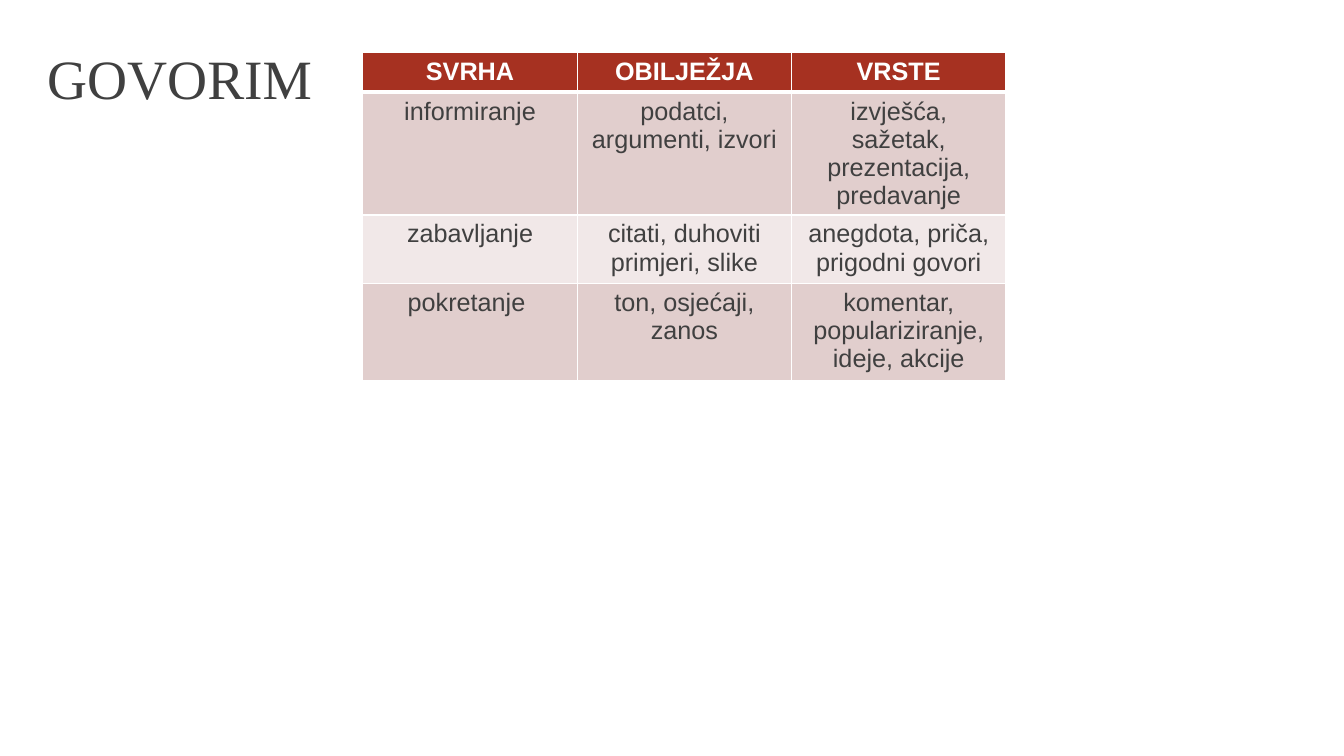
"""Build the GOVORIM slide with its table of speech purposes."""
from dataclasses import dataclass

from lxml import etree
from pptx import Presentation
from pptx.dml.color import RGBColor
from pptx.enum.text import MSO_ANCHOR, PP_ALIGN
from pptx.oxml.ns import qn
from pptx.util import Pt

BOTTOM = MSO_ANCHOR.BOTTOM
LEFT, CENTER = PP_ALIGN.LEFT, PP_ALIGN.CENTER
WHITE = RGBColor(0xFF, 0xFF, 0xFF)
DARK_GRAY = RGBColor(0x40, 0x40, 0x40)
BRICK = RGBColor(0xA6, 0x31, 0x21)
ROSE = RGBColor(0xE1, 0xCE, 0xCD)
PALE_ROSE = RGBColor(0xF1, 0xE8, 0xE8)
COLUMN_WIDTH = 153.1
THIN, THICK = 1, 3


@dataclass(frozen=True)
class TableRow:
    texts: tuple[str, str, str]
    height: float
    fill: RGBColor
    color: RGBColor = DARK_GRAY
    bold: bool = False
    top_line: float = THIN
    bottom_line: float = THIN


ROWS = (
    TableRow(("SVRHA", "OBILJEŽJA", "VRSTE"), 28.1, BRICK, WHITE, True, bottom_line=THICK),
    TableRow(("informiranje", "podatci, argumenti, izvori",
              "izvješća, sažetak, prezentacija, predavanje"), 87.6, ROSE, top_line=THICK),
    TableRow(("zabavljanje", "citati, duhoviti primjeri, slike",
              "anegdota, priča, prigodni govori"), 48.6, PALE_ROSE),
    TableRow(("pokretanje ", "ton, osjećaji, zanos",
              "komentar, populariziranje, ideje, akcije"), 69.6, ROSE),
)


def write_text(frame, text: str, *, font: str, size: float, color: RGBColor,
               bold: bool = False, align=LEFT, line_spacing: float = 1.0) -> None:
    frame.word_wrap = True
    para = frame.paragraphs[0]
    para.alignment = align
    para.line_spacing = line_spacing
    span = para.add_run()
    span.text = text
    span.font.name = font
    span.font.size = Pt(size)
    span.font.bold = bold
    span.font.color.rgb = color


def set_borders(cell, top: float, bottom: float) -> None:
    properties = cell._tc.get_or_add_tcPr()
    widths = {"a:lnL": THIN, "a:lnR": THIN, "a:lnT": top, "a:lnB": bottom}
    for position, (tag, width) in enumerate(widths.items()):
        line = etree.Element(qn(tag), w=str(Pt(width)))
        fill = etree.SubElement(line, qn("a:solidFill"))
        etree.SubElement(fill, qn("a:srgbClr"), val=str(WHITE))
        properties.insert(position, line)


def add_title(page) -> None:
    box = page.shapes.add_textbox(Pt(26.6), Pt(25.9), Pt(215.3), Pt(57.6))
    box.text_frame.vertical_anchor = BOTTOM
    write_text(box.text_frame, "GOVORIM", font="Times New Roman", size=39.6,
               color=DARK_GRAY, line_spacing=0.9)


def add_purposes(page) -> None:
    columns = len(ROWS[0].texts)
    table = page.shapes.add_table(
        len(ROWS), columns, Pt(259.2), Pt(37.7), Pt(columns * COLUMN_WIDTH),
        Pt(sum(row.height for row in ROWS))).table
    for column in table.columns:
        column.width = Pt(COLUMN_WIDTH)
    for row, table_row in zip(ROWS, table.rows):
        table_row.height = Pt(row.height)
        for text, cell in zip(row.texts, table_row.cells):
            cell.fill.solid()
            cell.fill.fore_color.rgb = row.fill
            set_borders(cell, row.top_line, row.bottom_line)
            write_text(cell.text_frame, text, font="Arial", size=18,
                       color=row.color, bold=row.bold, align=CENTER)


def main() -> None:
    deck = Presentation()
    deck.slide_width, deck.slide_height = Pt(960), Pt(540)
    page = deck.slides.add_slide(deck.slide_layouts[6])
    add_purposes(page)
    add_title(page)
    deck.save("out.pptx")


if __name__ == "__main__":
    main()
